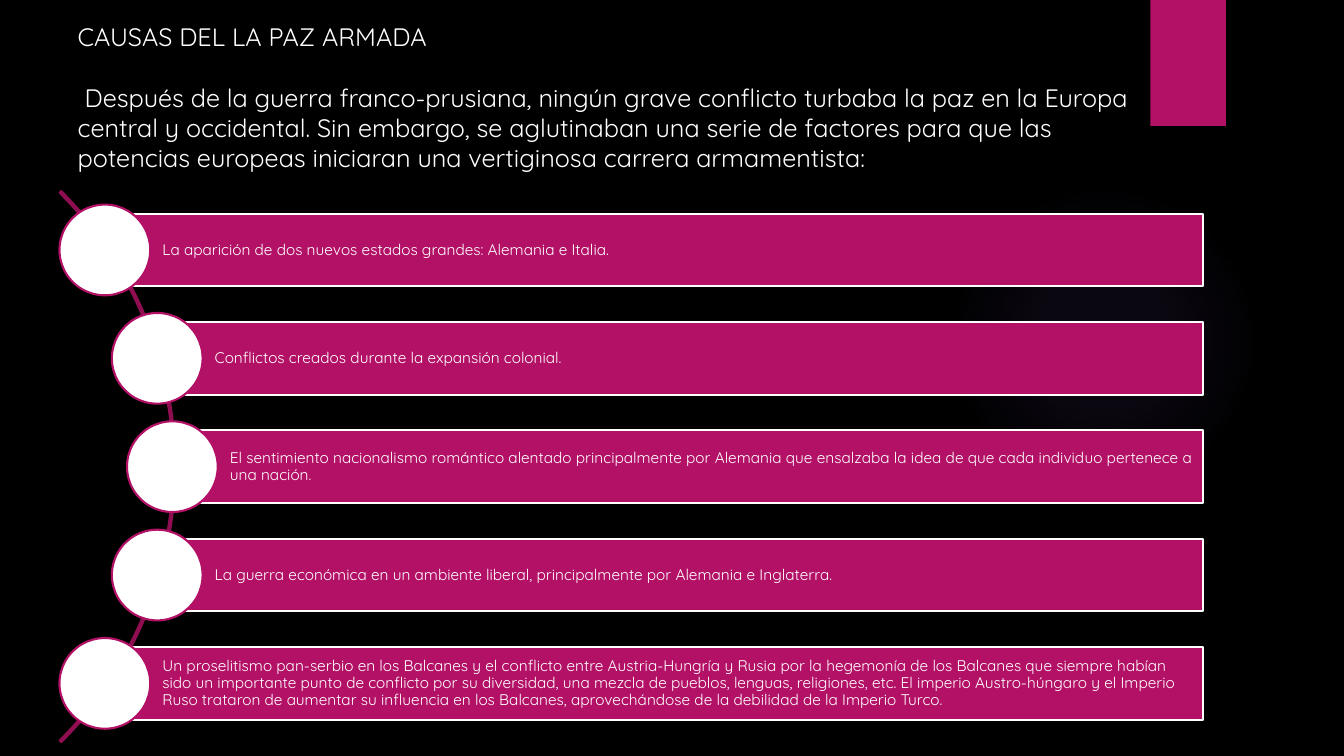
from lxml.etree import SubElement
from pptx import Presentation
from pptx.dml.color import RGBColor
from pptx.enum.shapes import MSO_SHAPE
from pptx.enum.text import MSO_ANCHOR, MSO_AUTO_SIZE, PP_ALIGN
from pptx.oxml.ns import qn
from pptx.util import Inches, Pt

TITLE = "CAUSAS DEL LA PAZ ARMADA"
INTRO = (" Después de la guerra franco-prusiana, ningún grave conflicto turbaba la paz en la "
         "Europa central y occidental. Sin embargo, se aglutinaban una serie de factores para que "
         "las potencias europeas iniciaran una vertiginosa carrera armamentista:")
CAUSES = [
    "La aparición de dos nuevos estados grandes: Alemania e Italia.",
    "Conflictos creados durante la expansión colonial.",
    "El sentimiento nacionalismo romántico alentado principalmente por Alemania que ensalzaba "
    "la idea de que cada individuo pertenece a una nación.",
    "La guerra económica en un ambiente liberal, principalmente por Alemania e Inglaterra.",
    "Un proselitismo pan-serbio en los Balcanes y el conflicto entre Austria-Hungría y Rusia por "
    "la hegemonía de los Balcanes que siempre habían sido un importante punto de conflicto por su "
    "diversidad, una mezcla de pueblos, lenguas, religiones, etc. El imperio Austro-húngaro y el "
    "Imperio Ruso trataron de aumentar su influencia en los Balcanes, aprovechándose de la "
    "debilidad de la Imperio Turco.",
]
COLORS = {"back": "000000", "text": "FFFFFF", "accent": "B31166", "arc": "8F0E52", "glow": "9B6BF2"}
FONT = "Quicksand"
GLOW_STOPS = [(0, 7), (36, 6), (69, 0)]

WIDTH, HEIGHT = 13.33, 7.5
BAR_LEFTS = [1.04, 1.56, 1.71]
BAR_RIGHT, BAR_HEIGHT = 11.93, 0.72
FIRST_ROW, ROW_STEP = 2.48, 1.075
DOT = 0.9
ARC_SIZE, ARC_LEFT = 7.73, -5.99


def color(name):
    return RGBColor.from_string(COLORS[name])


def add_block(page, kind, left, top, width, height, fill=None, line=None):
    shape = page.shapes.add_shape(kind, Inches(left), Inches(top), Inches(width), Inches(height))
    shape.shadow.inherit = False
    if fill:
        shape.fill.solid()
        shape.fill.fore_color.rgb = color(fill)
    else:
        shape.fill.background()
    if line:
        shape.line.color.rgb = color(line)
        shape.line.width = Pt(1.5)
    else:
        shape.line.fill.background()
    return shape


def add_text(para, text, size):
    para.alignment = PP_ALIGN.LEFT
    span = para.add_run()
    span.text = text
    span.font.name = FONT
    span.font.size = Pt(size)
    span.font.color.rgb = color("text")


def add_glow(page):
    glow = add_block(page, MSO_SHAPE.OVAL, 9.41, 1.83, 3.08, 3.08)
    properties = glow.element.spPr
    empty_fill = properties.find(qn("a:noFill"))
    gradient = SubElement(properties, qn("a:gradFill"))
    properties.replace(empty_fill, gradient)
    stops = SubElement(gradient, qn("a:gsLst"))
    for position, opacity in GLOW_STOPS:
        stop = SubElement(stops, qn("a:gs"), pos=str(position * 1000))
        tint = SubElement(stop, qn("a:srgbClr"), val=COLORS["glow"])
        SubElement(tint, qn("a:alpha"), val=str(opacity * 1000))
    circle = SubElement(gradient, qn("a:path"), path="circle")
    SubElement(circle, qn("a:fillToRect"), l="50000", t="50000", r="50000", b="50000")


def add_heading(page):
    box = page.shapes.title
    box.left, box.top, box.width, box.height = map(Inches, (0.67, 0.16, 10.67, 1.62))
    frame = box.text_frame
    frame.word_wrap = True
    frame.auto_size = MSO_AUTO_SIZE.NONE
    frame.vertical_anchor = MSO_ANCHOR.TOP
    add_text(frame.paragraphs[0], TITLE, 18)
    intro = frame.add_paragraph()
    intro.space_before = Pt(22)
    add_text(intro, INTRO, 18)


def add_cause(page, index, text):
    middle = FIRST_ROW + index * ROW_STEP
    left = BAR_LEFTS[min(index, len(CAUSES) - 1 - index)]
    bar = add_block(page, MSO_SHAPE.RECTANGLE, left, middle - BAR_HEIGHT / 2,
                    BAR_RIGHT - left, BAR_HEIGHT, "accent", "text")
    frame = bar.text_frame
    frame.word_wrap = True
    frame.vertical_anchor = MSO_ANCHOR.MIDDLE
    frame.margin_left = Inches(0.57)
    frame.margin_right = frame.margin_top = frame.margin_bottom = Inches(0.03)
    para = frame.paragraphs[0]
    para.line_spacing = 0.9
    add_text(para, text, 11)
    add_block(page, MSO_SHAPE.OVAL, left - DOT / 2, middle - DOT / 2, DOT, DOT, "text", "accent")


def main():
    deck = Presentation()
    deck.slide_width, deck.slide_height = Inches(WIDTH), Inches(HEIGHT)
    page = deck.slides.add_slide(deck.slide_layouts[5])
    page.background.fill.solid()
    page.background.fill.fore_color.rgb = color("back")
    add_glow(page)
    add_block(page, MSO_SHAPE.RECTANGLE, 11.41, 0, 0.75, 1.25, "accent")
    add_heading(page)
    arc_middle = FIRST_ROW + ROW_STEP * (len(CAUSES) - 1) / 2
    arc = add_block(page, MSO_SHAPE.BLOCK_ARC, ARC_LEFT, arc_middle - ARC_SIZE / 2,
                    ARC_SIZE, ARC_SIZE, line="arc")
    for number, value in enumerate((189, 27, 0.003)):
        arc.adjustments[number] = value
    for index, text in enumerate(CAUSES):
        add_cause(page, index, text)
    deck.save("out.pptx")


if __name__ == "__main__":
    main()
